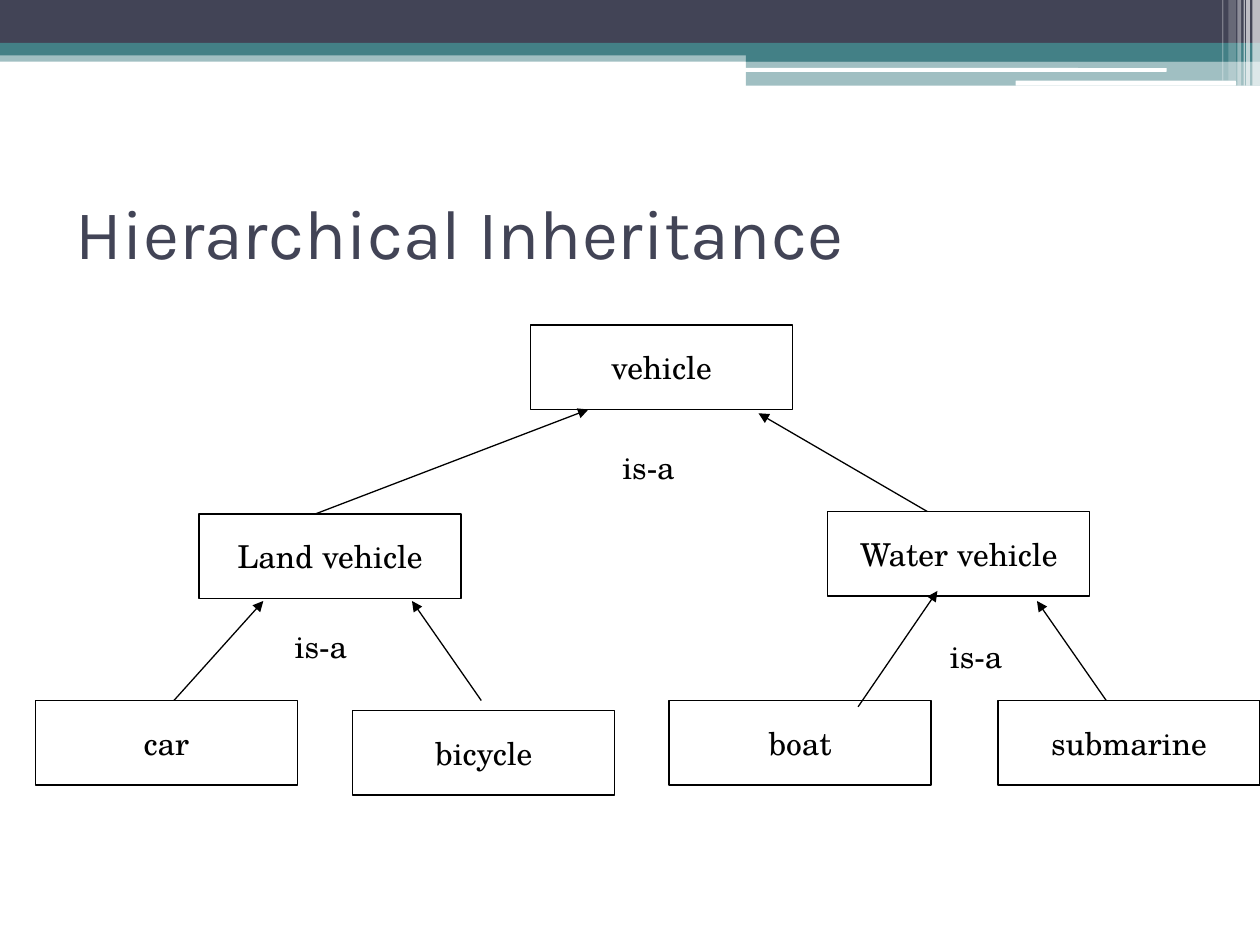
"""Build a slide showing a vehicle class hierarchy under a banded header."""
from typing import NamedTuple

import pptx
import pptx.dml.color
import pptx.enum.shapes
import pptx.enum.text
import pptx.oxml
import pptx.oxml.ns
import pptx.util

Inches = pptx.util.Inches
SHAPE = pptx.enum.shapes.MSO_SHAPE
ANCHOR = pptx.enum.text.MSO_ANCHOR
ALIGN = pptx.enum.text.PP_ALIGN
AUTO = pptx.enum.text.MSO_AUTO_SIZE

NAVY, TEAL, WHITE, BLACK = "424456", "438086", "FFFFFF", "000000"
HEADING, BODY = "Karla", "TeX Gyre Schola"
BOX_W, BOX_H = 2.08, 0.67


class Band(NamedTuple):
    x: float
    y: float
    w: float
    h: float
    color: str
    alpha: int = 100
    rounded: bool = False


class Node(NamedTuple):
    text: str
    x: float
    y: float


class Arrow(NamedTuple):
    x1: float
    y1: float
    x2: float
    y2: float


BANDS = [
    Band(0, 0.4, 10, 0.09, TEAL, 50),
    Band(0, 0, 10, 0.34, NAVY),
    Band(0, 0.34, 10, 0.1, TEAL),
    Band(5.92, 0.39, 4.08, 0.1, TEAL),
    Band(5.92, 0.48, 4.08, 0.2, TEAL, 50),
    Band(5.91, 0.54, 3.35, 0.03, WHITE, rounded=True),
    Band(8.06, 0.64, 1.75, 0.04, WHITE, rounded=True),
    Band(9.94, 0, 0.06, 0.68, WHITE, 65),
    Band(9.89, 0, 0.03, 0.68, WHITE, 65),
    Band(9.87, 0, 0.01, 0.68, WHITE, 60),
    Band(9.82, 0, 0.03, 0.68, WHITE, 40),
    Band(9.75, 0, 0.06, 0.64, WHITE, 20),
    Band(9.7, 0, 0.01, 0.64, WHITE, 30),
]
NODES = [
    Node("vehicle", 4.21, 2.58),
    Node("Water vehicle", 6.57, 4.06),
    Node("boat", 5.31, 5.56),
    Node("Land vehicle", 1.58, 4.08),
    Node("car", 0.28, 5.56),
    Node("submarine", 7.92, 5.56),
    Node("bicycle", 2.8, 5.64),
]
ARROWS = [
    Arrow(1.38, 5.56, 2.09, 4.77),
    Arrow(2.5, 4.08, 4.67, 3.25),
    Arrow(6.81, 5.61, 7.44, 4.69),
    Arrow(8.78, 5.56, 8.23, 4.77),
    Arrow(7.36, 4.06, 6.02, 3.28),
    Arrow(3.82, 5.56, 3.27, 4.77),
]
LABELS = [Node("is-a", 4.84, 3.51), Node("is-a", 2.24, 4.93), Node("is-a", 7.44, 5.01)]


def rgb(color: str) -> pptx.dml.color.RGBColor:
    return pptx.dml.color.RGBColor.from_string(color)


def write(sp, text: str, *, size=18, font=BODY, color=BLACK, align=ALIGN.LEFT,
          anchor=ANCHOR.TOP, wrap=False, auto=AUTO.NONE) -> None:
    tf = sp.text_frame
    tf.word_wrap, tf.auto_size, tf.vertical_anchor = wrap, auto, anchor
    p = tf.paragraphs[0]
    p.alignment = align
    r = p.add_run()
    r.text = text
    r.font.size, r.font.name = pptx.util.Pt(size), font
    r.font.color.rgb = rgb(color)


def add_band(s, band: Band) -> None:
    kind = SHAPE.ROUNDED_RECTANGLE if band.rounded else SHAPE.RECTANGLE
    sp = s.shapes.add_shape(kind, *map(Inches, band[:4]))
    sp.shadow.inherit = False
    sp.line.fill.background()
    sp.fill.solid()
    sp.fill.fore_color.rgb = rgb(band.color)
    if band.alpha < 100:
        clr = sp.fill._xPr.find(".//" + pptx.oxml.ns.qn("a:srgbClr"))
        clr.append(pptx.oxml.parse_xml(
            f'<a:alpha {pptx.oxml.ns.nsdecls("a")} val="{band.alpha * 1000}"/>'))


def add_node(s, node: Node) -> None:
    sp = s.shapes.add_shape(SHAPE.RECTANGLE, *map(Inches, (node.x, node.y, BOX_W, BOX_H)))
    sp.shadow.inherit = False
    sp.fill.solid()
    sp.fill.fore_color.rgb = rgb(WHITE)
    sp.line.color.rgb = rgb(BLACK)
    sp.line.width = pptx.util.Pt(0.75)
    write(sp, node.text, align=ALIGN.CENTER, anchor=ANCHOR.MIDDLE)


def add_arrow(s, arrow: Arrow) -> None:
    sp = s.shapes.add_connector(pptx.enum.shapes.MSO_CONNECTOR.STRAIGHT, *map(Inches, arrow))
    sp.line.color.rgb = rgb(BLACK)
    sp.line.width = pptx.util.Pt(0.75)
    ns = pptx.oxml.ns.nsdecls("a")
    sp.line._get_or_add_ln().append(pptx.oxml.parse_xml(f'<a:tailEnd {ns} type="triangle"/>'))
    sp._element.spPr.append(pptx.oxml.parse_xml(f"<a:effectLst {ns}/>"))


def add_label(s, label: Node) -> None:
    sp = s.shapes.add_textbox(*map(Inches, (label.x, label.y, 0.68, 0.5)))
    write(sp, label.text, auto=AUTO.SHAPE_TO_FIT_TEXT)


def main() -> None:
    prs = pptx.Presentation()
    prs.slide_width, prs.slide_height = Inches(10), Inches(7.5)
    s = prs.slides.add_slide(prs.slide_layouts[5])
    for band in BANDS:
        add_band(s, band)
    title = s.shapes.title
    title.left, title.top, title.width, title.height = map(Inches, (0.5, 1.25, 9, 1.17))
    write(title, "Hierarchical Inheritance", size=40, font=HEADING, color=NAVY,
          anchor=ANCHOR.MIDDLE, wrap=True)
    for node in NODES:
        add_node(s, node)
    for arrow in ARROWS:
        add_arrow(s, arrow)
    for label in LABELS:
        add_label(s, label)
    prs.save("out.pptx")


if __name__ == "__main__":
    main()
